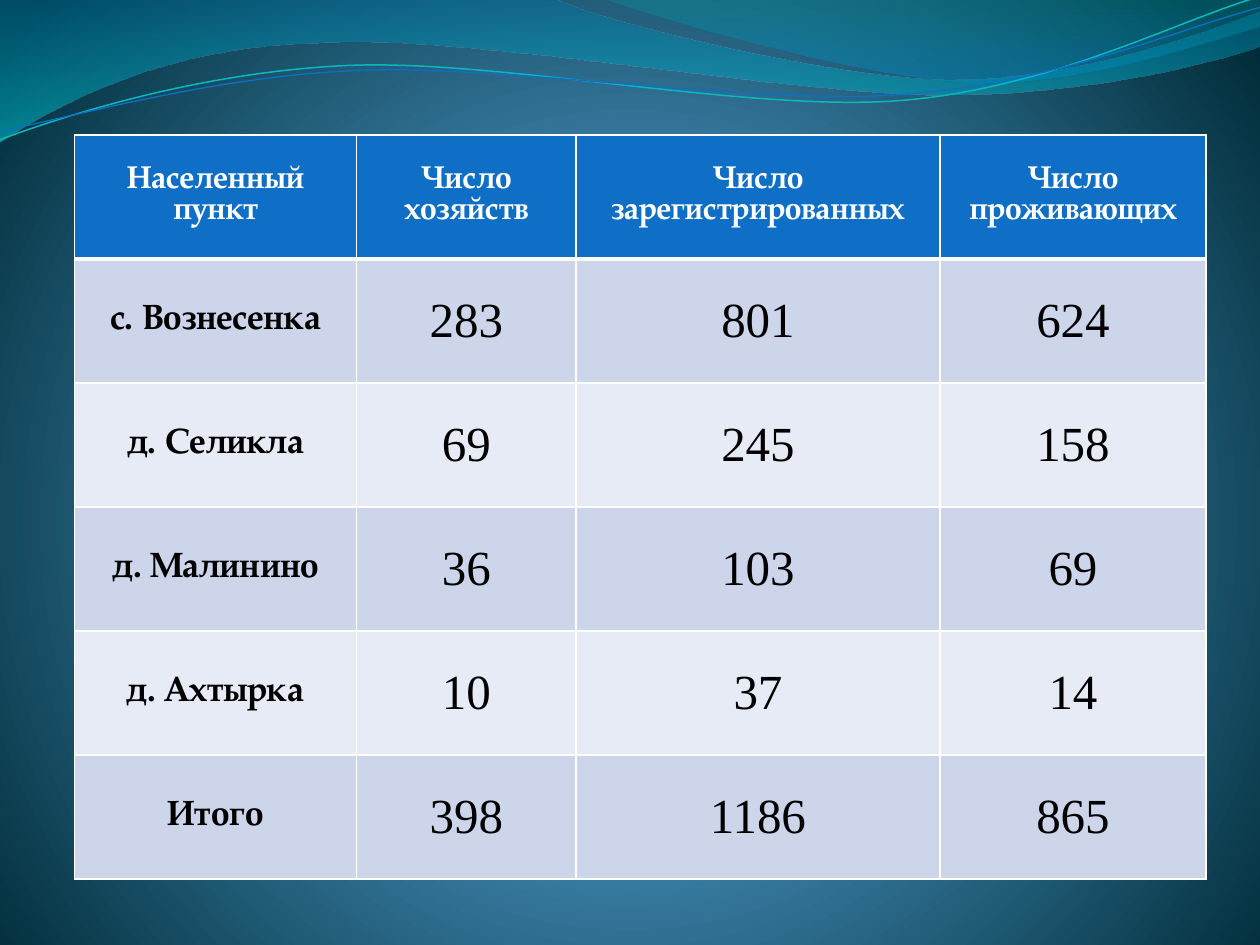
from math import cos, radians, sin

from pptx import Presentation
from pptx.dml.color import RGBColor
from pptx.enum.text import MSO_ANCHOR, PP_ALIGN
from pptx.oxml import parse_xml
from pptx.oxml.ns import nsdecls, qn
from pptx.oxml.xmlchemy import OxmlElement
from pptx.util import Cm, Pt

CENTER = PP_ALIGN.CENTER
MIDDLE = MSO_ANCHOR.MIDDLE

COLORS = {
    "glow": "4AA0D6", "sea": "4C98C7", "night": "002C38",
    "wave_blue": "0074A1", "wave_cyan": "00C6CF",
    "crest_teal": "00A1A9", "crest_blue": "008BBF",
    "line_teal": "0AB8BF", "blue": "0F6FC6",
    "band_dark": "CCD5EA", "band_light": "E7EBF5",
    "white": "FFFFFF", "black": "000000",
}
HEADING_FONT = "TeX Gyre Pagella"
NUMBER_FONT = "Times New Roman"

WAVE_UNITS = 1000
WAVE = [
    [(0, 0)],
    [(440, -1)],
    [(476, 17), (664, 63), (758, 63)],
    [(853, 63), (958, 26), (1000, 9)],
    [(1001, 36)],
    [(983, 44), (870, 76), (746, 75)],
    [(622, 75), (382, 28), (257, 34)],
    [(129, 36), (46, 83), (-1, 113)],
]
CREST = [
    [(479, -1)],
    [(509, 11), (682, 62), (769, 65)],
    [(856, 69), (961, 32), (1000, 21)],
    [(1000, 0)],
]
TEAL_LINE = [
    [(0, 111)],
    [(48, 93), (158, 57), (277, 52)],
    [(395, 47), (593, 89), (713, 80)],
    [(833, 71), (938, 15), (998, -2)],
]
BLUE_LINE = [
    [(0, 104)],
    [(47, 96), (164, 61), (283, 56)],
    [(403, 51), (597, 84), (717, 75)],
    [(836, 67), (941, 21), (1000, 6)],
]
LINE_TILT = -2.7

COLUMN_WIDTHS = [5.69, 4.42, 7.34, 5.36]
ROWS = [
    ["Населенный пункт", "Число\nхозяйств", "Число зарегистрированных", "Число проживающих"],
    ["с. Вознесенка", "283", "801", "624"],
    ["д. Селикла", "69", "245", "158"],
    ["д. Малинино", "36", "103", "69"],
    ["д. Ахтырка", "10", "37", "14"],
    ["Итого", "398", "1186", "865"],
]


def color(name):
    return RGBColor.from_string(COLORS[name])


def set_gradient(fill, parent, stops, direction):
    fill.gradient()
    stop_xml = "".join(
        f'<a:gs pos="{position * 1000}"><a:srgbClr val="{COLORS[name]}">'
        f'<a:alpha val="{alpha * 1000}"/></a:srgbClr></a:gs>'
        for position, name, alpha in stops
    )
    gradient = parse_xml(
        f'<a:gradFill {nsdecls("a")} rotWithShape="1">'
        f"<a:gsLst>{stop_xml}</a:gsLst>{direction}</a:gradFill>"
    )
    parent.replace(parent.find(qn("a:gradFill")), gradient)


def paint_background(slide):
    fill = slide.background.fill
    fill.solid()
    set_gradient(
        fill, slide.element.find(".//" + qn("p:bgPr")),
        [(0, "glow", 100), (25, "sea", 100), (100, "night", 100)],
        '<a:path path="circle"><a:fillToRect l="10000" t="110000" r="10000" b="100000"/></a:path>',
    )


def add_curve(slide, box, segments, closed=False, tilt=0):
    left, top, width = box
    scale = width / WAVE_UNITS
    points = [(x * scale, y * scale) for segment in segments for x, y in segment]
    middle_x = width / 2
    middle_y = (min(y for _, y in points) + max(y for _, y in points)) / 2
    cosine, sine = cos(radians(-tilt)), sin(radians(-tilt))
    level = [
        (left + middle_x + (x - middle_x) * cosine - (y - middle_y) * sine,
         top + middle_y + (x - middle_x) * sine + (y - middle_y) * cosine)
        for x, y in points
    ]
    builder = slide.shapes.build_freeform(*level[0], scale=1.0)
    builder.add_line_segments(level[1:], close=closed)
    shape = builder.convert_to_shape()
    shape.shadow.inherit = False
    shape.rotation = tilt

    outline = next(shape.element.iter(qn("a:path")))
    lines = iter(outline.findall(qn("a:lnTo")))
    for segment in segments[1:]:
        pieces = [next(lines) for _ in segment]
        if len(pieces) == 3:
            curve = OxmlElement("a:cubicBezTo")
            pieces[0].addprevious(curve)
            for piece in pieces:
                curve.append(piece[0])
                outline.remove(piece)
    return shape


def add_waves(slide, box):
    for segments, stops in (
        (WAVE, [(0, "wave_blue", 45), (100, "wave_cyan", 55)]),
        (CREST, [(0, "crest_teal", 30), (80, "crest_blue", 45)]),
    ):
        shape = add_curve(slide, box, segments, closed=True)
        set_gradient(shape.fill, shape.element.spPr, stops, '<a:lin ang="5400000" scaled="1"/>')
        shape.line.fill.background()
    for segments, name, weight in (
        (TEAL_LINE, "line_teal", 0.85),
        (BLUE_LINE, "blue", 0.75),
    ):
        shape = add_curve(slide, box, segments, tilt=LINE_TILT)
        shape.fill.background()
        shape.line.color.rgb = color(name)
        shape.line.width = Pt(weight)


def write_text(text_frame, text, font, size, name, bold=False):
    text_frame.text = text
    for paragraph in text_frame.paragraphs:
        paragraph.alignment = CENTER
        for run in paragraph.runs:
            run.font.name = font
            run.font.size = Pt(size)
            run.font.bold = bold
            run.font.color.rgb = color(name)


def set_borders(cell, widths):
    properties = cell._tc.get_or_add_tcPr()
    for index, (side, width) in enumerate(widths.items()):
        properties.insert(index, parse_xml(
            f'<a:ln{side} {nsdecls("a")} w="{Pt(width)}"><a:solidFill>'
            f'<a:srgbClr val="{COLORS["white"]}"/></a:solidFill></a:ln{side}>'
        ))


def add_population_table(slide, box):
    table = slide.shapes.add_table(len(ROWS), len(COLUMN_WIDTHS), *box).table
    for column, width in zip(table.columns, COLUMN_WIDTHS):
        column.width = Cm(width)
    for row_index, values in enumerate(ROWS):
        header = row_index == 0
        band = "blue" if header else "band_dark" if row_index % 2 else "band_light"
        for column_index, text in enumerate(values):
            cell = table.cell(row_index, column_index)
            cell.vertical_anchor = MIDDLE
            cell.fill.solid()
            cell.fill.fore_color.rgb = color(band)
            if header:
                style = dict(font=HEADING_FONT, size=18, name="white", bold=True)
            elif column_index == 0:
                style = dict(font=HEADING_FONT, size=20, name="black", bold=True)
            else:
                style = dict(font=NUMBER_FONT, size=28, name="black")
            write_text(cell.text_frame, text, **style)
            set_borders(cell, {"L": 1, "R": 1, "T": 3 if row_index == 1 else 1, "B": 3 if header else 1})


def main():
    presentation = Presentation()
    presentation.slide_width = Cm(25.4)
    presentation.slide_height = Cm(19.05)
    slide = presentation.slides.add_slide(presentation.slide_layouts[6])
    paint_background(slide)
    add_waves(slide, (Cm(0), Cm(0), presentation.slide_width))
    add_population_table(slide, (Cm(1.5), Cm(2.72), Cm(sum(COLUMN_WIDTHS)), Cm(15)))
    presentation.save("out.pptx")


if __name__ == "__main__":
    main()
